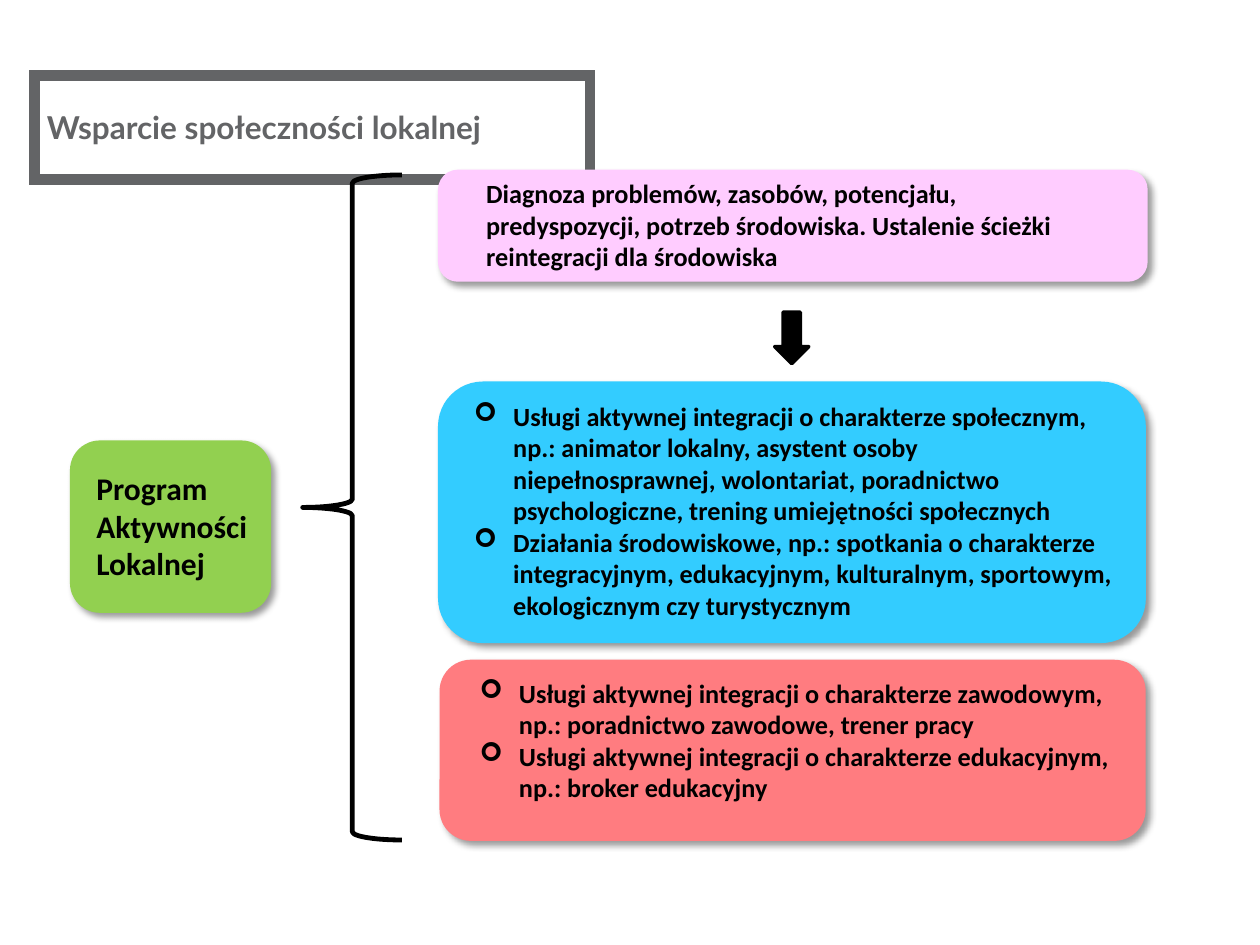
from lxml.etree import SubElement
from pptx import Presentation
from pptx.dml.color import RGBColor
from pptx.enum.shapes import MSO_SHAPE
from pptx.enum.text import MSO_ANCHOR, PP_ALIGN
from pptx.oxml import parse_xml
from pptx.oxml.ns import nsdecls, qn
from pptx.util import Pt

BLACK = RGBColor(0x00, 0x00, 0x00)
GRAY = RGBColor(0x63, 0x64, 0x66)
GREEN = RGBColor(0x92, 0xD0, 0x50)
PINK = RGBColor(0xFF, 0xCC, 0xFF)
BLUE = RGBColor(0x33, 0xCC, 0xFF)
RED = RGBColor(0xFF, 0x7C, 0x80)

SHADOW = (
    f'<a:effectLst {nsdecls("a")}>'
    '<a:outerShdw blurRad="50800" dist="38100" dir="2700000" algn="tl" rotWithShape="0">'
    '<a:srgbClr val="000000"><a:alpha val="40000"/></a:srgbClr>'
    '</a:outerShdw></a:effectLst>'
)


def add_shape(slide, kind, box, fill=None, line=None, width=2):
    shape = slide.shapes.add_shape(kind, *map(Pt, box))
    shape.shadow.inherit = False
    if fill is None:
        shape.fill.background()
    else:
        shape.fill.solid()
        shape.fill.fore_color.rgb = fill
    if line is None:
        shape.line.fill.background()
    else:
        shape.line.color.rgb = line
        shape.line.width = Pt(width)
    return shape


def add_card(slide, box, color):
    """Rounded card with a soft shadow to the lower right."""
    card = add_shape(slide, MSO_SHAPE.ROUNDED_RECTANGLE, box, color, color)
    props = card._element.spPr
    props.replace(props.find(qn("a:effectLst")), parse_xml(SHADOW))


def set_text(shape, lines, size, font="Calibri", color=BLACK, bullet=None,
             anchor=MSO_ANCHOR.TOP):
    frame = shape.text_frame
    frame.word_wrap = True
    frame.vertical_anchor = anchor
    frame.text = "\n".join(lines)
    for para in frame.paragraphs:
        para.alignment = PP_ALIGN.LEFT
        if bullet:
            props = para._p.get_or_add_pPr()
            props.set("marL", str(Pt(22.5)))
            props.set("indent", str(-Pt(22.5)))
            SubElement(props, qn("a:buFont"), typeface="Wingdings")
            SubElement(props, qn("a:buChar"), char=bullet)
        para.font.name = font
        para.font.size = Pt(size)
        para.font.bold = True
        para.font.color.rgb = color


def add_text(slide, box, lines, size, bullet=None):
    set_text(slide.shapes.add_textbox(*map(Pt, box)), lines, size, bullet=bullet)


def main():
    deck = Presentation()
    deck.slide_width, deck.slide_height = Pt(720), Pt(540)
    slide = deck.slides.add_slide(deck.slide_layouts[6])

    # Framed title with square corners
    title = add_shape(slide, MSO_SHAPE.RECTANGLE, (19.7, 43, 317.5, 59.5),
                      line=GRAY, width=6)
    SubElement(title.line._get_or_add_ln(), qn("a:miter"), lim="800000")
    set_text(title, ["Wsparcie społeczności lokalnej"], 18, "Lato", GRAY,
             anchor=MSO_ANCHOR.MIDDLE)

    # Program card, brace and the three stage cards
    add_card(slide, (41, 252.7, 113, 96.5), GREEN)
    add_shape(slide, MSO_SHAPE.LEFT_BRACE, (173, 100, 56.7, 380),
              line=BLACK, width=2.75)
    add_card(slide, (251.3, 98, 403.5, 62), PINK)
    add_card(slide, (251.3, 219, 402.5, 147.5), BLUE)
    add_card(slide, (252.2, 378, 401.5, 101.5), RED)

    # Program name
    add_text(slide, (48, 264.3, 106.5, 72.7), ["Program Aktywności Lokalnej"], 18)

    # Diagnosis stage and the arrow to the services
    panel = add_shape(slide, MSO_SHAPE.RECTANGLE, (270.7, 98, 361.5, 62), PINK)
    set_text(panel, ["Diagnoza problemów, zasobów, potencjału, predyspozycji, "
                     "potrzeb środowiska. Ustalenie ścieżki reintegracji dla "
                     "środowiska"], 15)
    add_shape(slide, MSO_SHAPE.DOWN_ARROW, (442.7, 178.3, 19.5, 29.5), BLACK, BLACK)

    # Social services
    add_text(slide, (263.7, 225, 382.5, 134.6), [
        "Usługi aktywnej integracji o charakterze społecznym, np.: animator "
        "lokalny, asystent osoby niepełnosprawnej, wolontariat, poradnictwo "
        "psychologiczne, trening umiejętności społecznych",
        "Działania środowiskowe, np.: spotkania o charakterze integracyjnym, "
        "edukacyjnym, kulturalnym, sportowym, ekologicznym czy turystycznym",
    ], 15, "➢")

    # Job and education services
    add_text(slide, (267, 383.3, 382.5, 80), [
        "Usługi aktywnej integracji o charakterze zawodowym, np.: poradnictwo "
        "zawodowe, trener pracy",
        "Usługi aktywnej integracji o charakterze edukacyjnym, np.: broker "
        "edukacyjny",
    ], 15, "➢")

    deck.save("out.pptx")


if __name__ == "__main__":
    main()
